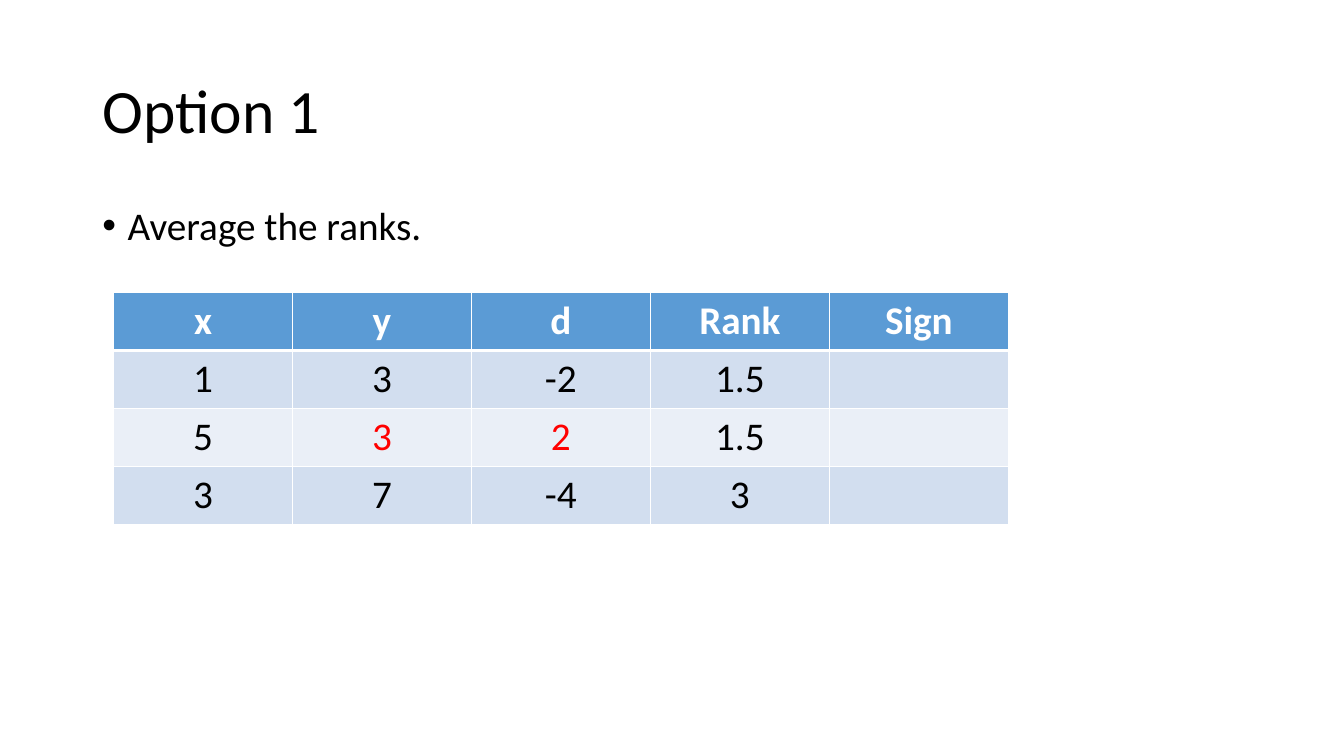
from lxml import etree
from pptx import Presentation
from pptx.dml.color import RGBColor
from pptx.enum.text import MSO_ANCHOR as Anchor, PP_ALIGN as Align
from pptx.oxml.ns import qn
from pptx.util import Cm, Pt

# Content
TITLE = "Option 1"
POINT = "Average the ranks."
ROWS = [
    ("x", "y", "d", "Rank", "Sign"),
    ("1", "3", "-2", "1.5", ""),
    ("5", "3", "2", "1.5", ""),
    ("3", "7", "-4", "3", ""),
]
RED_CELLS = {(2, 1), (2, 2)}

# Look
FONT = "Calibri"
BLACK, WHITE, RED = "000000", "FFFFFF", "FF0000"
HEAD, BANDS = "5B9BD5", ("D2DEEF", "EAEFF7")

# Layout in cm
LEFT, WIDTH = 2.33, 29.21
TABLE_X, TABLE_Y = 2.86, 7.37
COL_W, ROW_H = 4.51, 1.46


def color(code):
    return RGBColor.from_string(code)


def write(frame, text, size=28, ink=BLACK, bold=False, align=Align.LEFT,
          line=None, before=0):
    par = frame.paragraphs[0]
    par.alignment = align
    par.space_before = Pt(before)
    if line:
        par.line_spacing = line
    if text:
        run = par.add_run()
        run.text = text
        font = run.font
        font.name, font.size, font.bold = FONT, Pt(size), bold
        font.color.rgb = color(ink)
    return par


def add_box(slide, top, height, anchor):
    box = slide.shapes.add_textbox(Cm(LEFT), Cm(top), Cm(WIDTH), Cm(height))
    frame = box.text_frame
    frame.word_wrap = True
    frame.vertical_anchor = anchor
    return frame


def add_bullet(par, indent):
    props = par._p.get_or_add_pPr()
    props.set("marL", str(Cm(indent)))
    props.set("indent", str(-Cm(indent)))
    etree.SubElement(props, qn("a:buFont")).set("typeface", "Arial")
    etree.SubElement(props, qn("a:buChar")).set("char", "•")


def add_edges(cell, top, bottom):
    props = cell._tc.get_or_add_tcPr()
    edges = (("L", 1), ("R", 1), ("T", top), ("B", bottom))
    for spot, (side, width) in enumerate(edges):
        edge = etree.Element(qn(f"a:ln{side}"), w=str(Pt(width)))
        fill = etree.SubElement(edge, qn("a:solidFill"))
        etree.SubElement(fill, qn("a:srgbClr")).set("val", WHITE)
        props.insert(spot, edge)


def add_grid(slide):
    rows, cols = len(ROWS), len(ROWS[0])
    table = slide.shapes.add_table(
        rows, cols, Cm(TABLE_X), Cm(TABLE_Y),
        Cm(COL_W * cols), Cm(ROW_H * rows)).table
    for col in table.columns:
        col.width = Cm(COL_W)
    for r, row in enumerate(ROWS):
        table.rows[r].height = Cm(ROW_H)
        head = r == 0
        for c, text in enumerate(row):
            cell = table.cell(r, c)
            cell.fill.solid()
            cell.fill.fore_color.rgb = color(HEAD if head else BANDS[(r - 1) % 2])
            add_edges(cell, top=3 if r == 1 else 1, bottom=3 if head else 1)
            ink = WHITE if head else RED if (r, c) in RED_CELLS else BLACK
            write(cell.text_frame, text, ink=ink, bold=head, align=Align.CENTER)


def main():
    deck = Presentation()
    deck.slide_width, deck.slide_height = Cm(33.87), Cm(19.05)
    slide = deck.slides.add_slide(deck.slide_layouts[6])

    # Title and bullet
    write(add_box(slide, 1.01, 3.68, Anchor.MIDDLE), TITLE, size=44, line=0.9)
    point = write(add_box(slide, 5.07, 12.09, Anchor.TOP), POINT,
                  line=0.9, before=10)
    add_bullet(point, 0.64)

    # Rank table
    add_grid(slide)
    deck.save("out.pptx")


if __name__ == "__main__":
    main()
